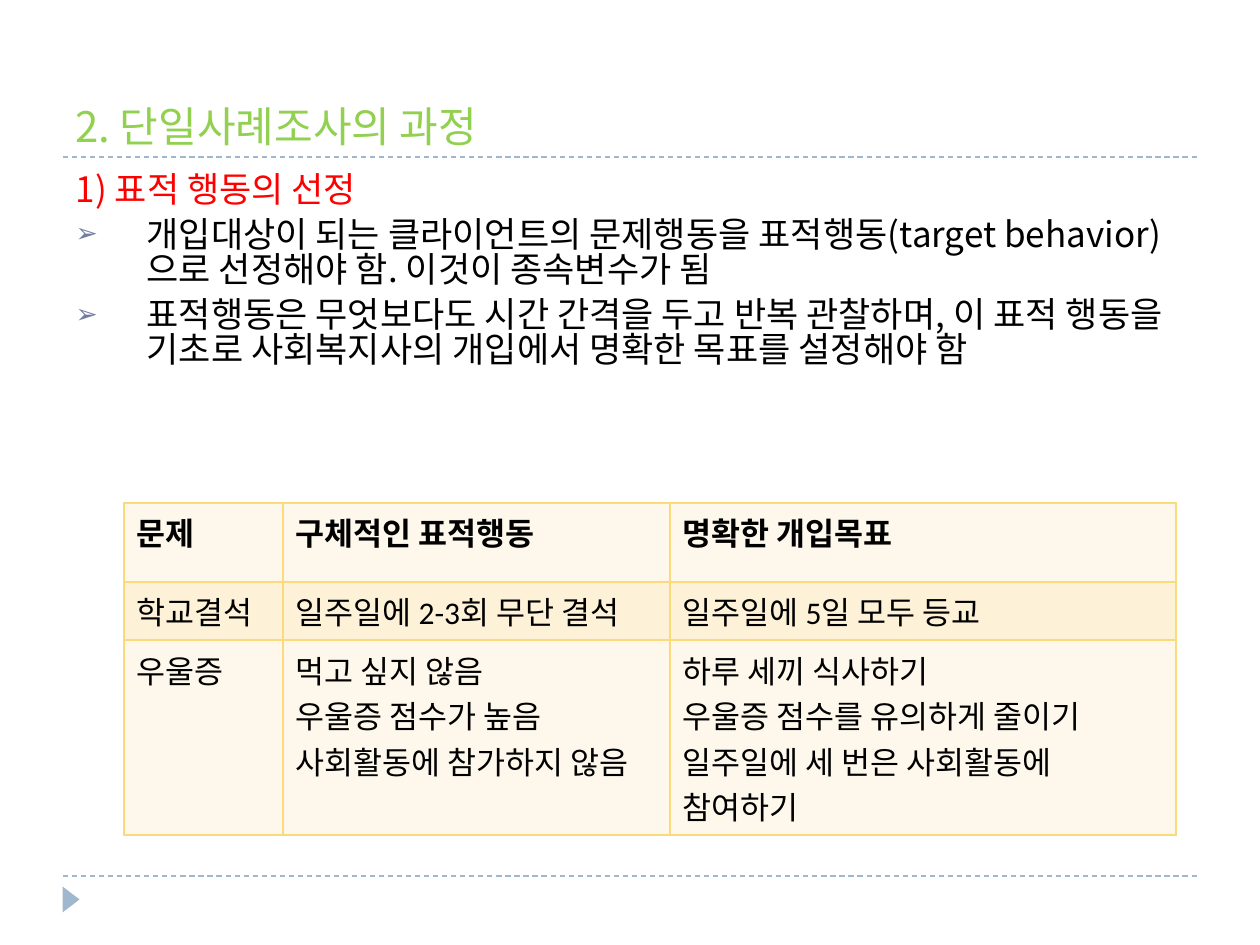
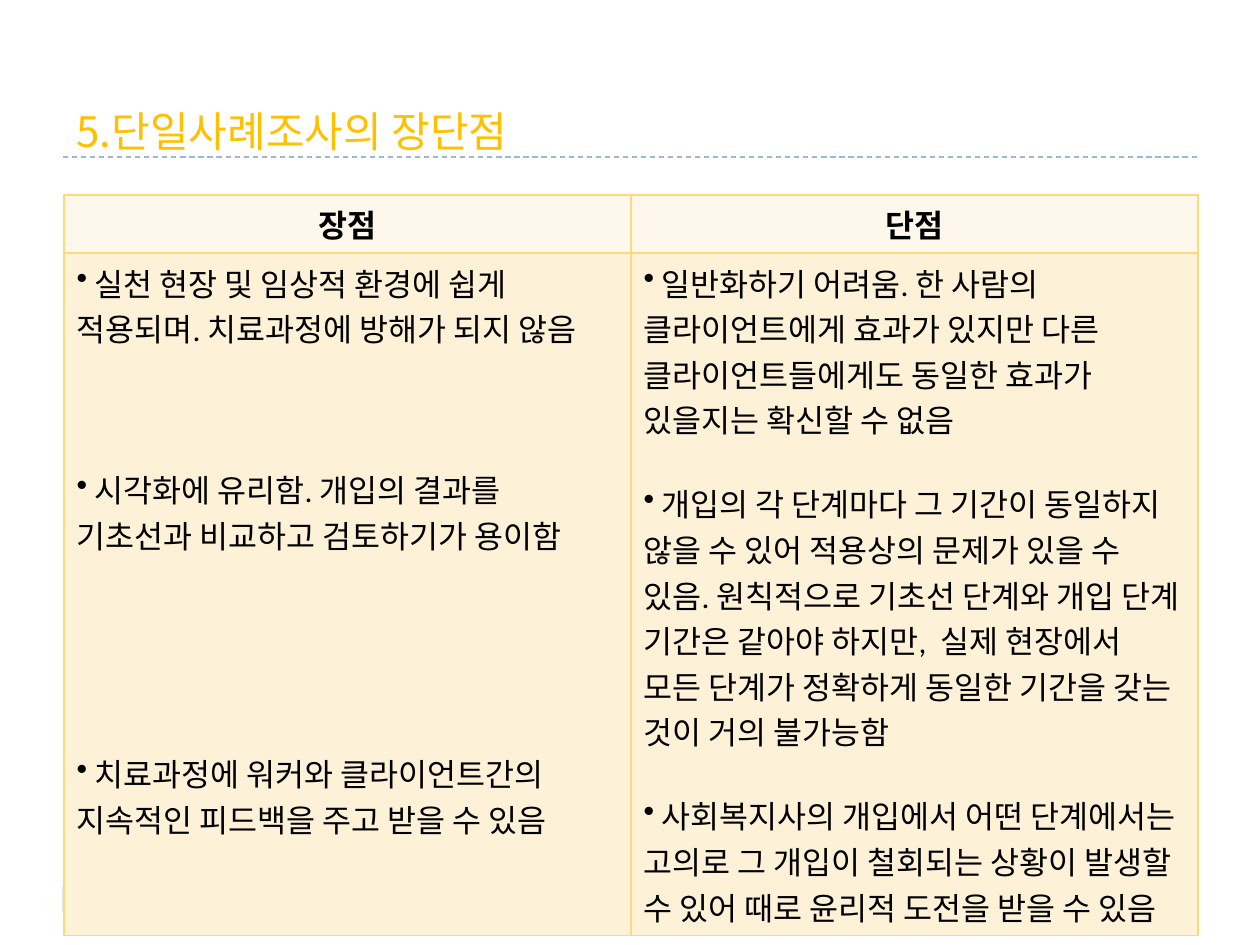
from lxml import etree
from pptx import Presentation
from pptx import util as u
from pptx.dml.color import RGBColor
from pptx.enum import dml, shapes, text
from pptx.oxml.ns import qn

PX = u.Inches(1) / 126
TITLE_ONLY, TITLE_AND_BODY = 5, 1
KOREAN, LATIN = "Noto Sans CJK KR", "Calibri"
ACCENT, BORDER, BULLET = "9FB8CD", "FADA7A", "727CA3"
BLACK, RED, GREEN, AMBER = "000000", "FF0000", "92D050", "FFC000"
ROW_FILLS = ["FEF8EC", "FDF1D7"]


def px(length):
    return u.Emu(round(length * PX))


def color(hex_string):
    return RGBColor.from_string(hex_string)


def add_child(parent, tag, **attributes):
    return etree.SubElement(parent, qn(tag), attributes)


def write(para, words, size=18, ink=BLACK, font=LATIN, bold=False, align="LEFT",
          gap=0, spacing=None, indent=0, bullet=None, bullet_ink=None, bullet_size=None):
    """Fill a paragraph; gap is the space before it in points."""
    para.alignment = getattr(text.PP_ALIGN, align)
    para.space_before = u.Pt(gap)
    if spacing:
        para.line_spacing = spacing
    props = para._p.get_or_add_pPr()
    props.set("marL", str(px(indent)))
    props.set("indent", str(-px(indent)))
    if bullet_ink:
        add_child(add_child(props, "a:buClr"), "a:srgbClr", val=bullet_ink)
    if bullet_size:
        add_child(props, "a:buSzPct", val=str(bullet_size * 1000))
    if bullet:
        add_child(props, "a:buChar", char=bullet)
    else:
        add_child(props, "a:buNone")
    span = para.add_run()
    span.text = words
    span.font.size = u.Pt(size)
    span.font.bold = bold
    span.font.name = font
    span.font.color.rgb = color(ink)
    add_child(span._r.get_or_add_rPr(), "a:ea", typeface=KOREAN)


def write_all(frame, items):
    """Write (words, format) pairs as the paragraphs of a text frame."""
    for index, (words, style) in enumerate(items):
        para = frame.add_paragraph() if index else frame.paragraphs[0]
        write(para, words, **style)


def point(words, gap=0):
    return " " + words, dict(bullet="•", gap=gap)


def lines(*texts, **style):
    return [(words, style) for words in texts]


class Page:
    def __init__(self, deck, layout):
        self.slide = deck.slides.add_slide(deck.slide_layouts[layout])
        for y in (157, 876):
            self.rule(63, 1197, y)
        self.marker(58, 891, 26, 17)

    def rule(self, left, right, y):
        line = self.slide.shapes.add_connector(
            shapes.MSO_CONNECTOR.STRAIGHT, px(left), px(y), px(right), px(y))
        line.line.color.rgb = color(ACCENT)
        line.line.width = u.Pt(0.75)
        line.line.dash_style = dml.MSO_LINE.DASH
        add_child(line._element.spPr, "a:effectLst")

    def marker(self, *place):
        triangle = self.slide.shapes.add_shape(
            shapes.MSO_SHAPE.ISOSCELES_TRIANGLE, *map(px, place))
        triangle.rotation = 90
        triangle.shadow.inherit = False
        triangle.fill.solid()
        triangle.fill.fore_color.rgb = color(ACCENT)
        triangle.line.fill.background()

    def place(self, box, left, top, width, height, anchor):
        box.left, box.top, box.width, box.height = map(px, (left, top, width, height))
        box.text_frame.vertical_anchor = anchor
        box.text_frame.auto_size = text.MSO_AUTO_SIZE.NONE

    def title(self, words, ink, left, top):
        box = self.slide.shapes.title
        self.place(box, left, top, 1134, 136, text.MSO_ANCHOR.BOTTOM)
        write(box.text_frame.paragraphs[0], words, size=24, ink=ink, font=KOREAN)

    def body(self, heading, points):
        box = self.slide.placeholders[1]
        self.place(box, 63, 168, 1134, 680, text.MSO_ANCHOR.TOP)
        shared = dict(size=20, font=KOREAN, gap=6, spacing=0.83, indent=71)
        arrow = dict(shared, bullet="➢", bullet_ink=BULLET, bullet_size=76)
        write_all(box.text_frame, lines(heading, ink=RED, **shared) + lines(*points, **arrow))

    def table(self, left, top, widths, heights, rows):
        table = self.slide.shapes.add_table(
            len(rows), len(widths), px(left), px(top), px(sum(widths)), px(sum(heights))).table
        for column, width in zip(table.columns, widths):
            column.width = px(width)
        for index, (row, height) in enumerate(zip(rows, heights)):
            table.rows[index].height = px(height)
            for cell, items in zip(table.rows[index].cells, row):
                self.cell(cell, items, ROW_FILLS[index % 2])

    def cell(self, cell, items, fill):
        props = cell._tc.get_or_add_tcPr()
        for side in ("a:lnL", "a:lnR", "a:lnT", "a:lnB"):
            edge = add_child(props, side, w=str(u.Pt(1)))
            add_child(add_child(edge, "a:solidFill"), "a:srgbClr", val=BORDER)
        cell.fill.solid()
        cell.fill.fore_color.rgb = color(fill)
        write_all(cell.text_frame, items)


def process_slide(deck):
    page = Page(deck, TITLE_AND_BODY)
    page.title("2. 단일사례조사의 과정", GREEN, 63, 21)
    page.body("1) 표적 행동의 선정", [
        "개입대상이 되는 클라이언트의 문제행동을 표적행동(target behavior)으로 "
        "선정해야 함. 이것이 종속변수가 됨",
        "표적행동은 무엇보다도 시간 간격을 두고 반복 관찰하며, 이 표적 행동을 기초로 "
        "사회복지사의 개입에서 명확한 목표를 설정해야 함",
    ])
    header = [lines(words, bold=True) for words in ("문제", "구체적인 표적행동", "명확한 개입목표")]
    page.table(124, 503, [159, 387, 506], [79, 58, 195], [
        header,
        [lines("학교결석"), lines("일주일에 2-3회 무단 결석"), lines("일주일에 5일 모두 등교")],
        [lines("우울증"),
         lines("먹고 싶지 않음", "우울증 점수가 높음", "사회활동에 참가하지 않음"),
         lines("하루 세끼 식사하기", "우울증 점수를 유의하게 줄이기",
               "일주일에 세 번은 사회활동에 참여하기")],
    ])


def pros_and_cons_slide(deck):
    page = Page(deck, TITLE_ONLY)
    page.title("5.단일사례조사의 장단점", AMBER, 64, 26)
    header = [lines(words, bold=True, align="CENTER") for words in ("장점", "단점")]
    pros = [
        point("실천 현장 및 임상적 환경에 쉽게 적용되며. 치료과정에 방해가 되지 않음"),
        point("시각화에 유리함. 개입의 결과를 기초선과 비교하고 검토하기가 용이함", gap=66),
        point("치료과정에 워커와 클라이언트간의 지속적인 피드백을 주고 받을 수 있음", gap=110),
    ]
    cons = [
        point("일반화하기 어려움. 한 사람의 클라이언트에게 효과가 있지만 다른 "
              "클라이언트들에게도 동일한 효과가 있을지는 확신할 수 없음"),
        point("개입의 각 단계마다 그 기간이 동일하지 않을 수 있어 적용상의 문제가 있을 수 있음. "
              "원칙적으로 기초선 단계와 개입 단계 기간은 같아야 하지만,  실제 현장에서 모든 단계가 "
              "정확하게 동일한 기간을 갖는 것이 거의 불가능함", gap=22),
        point("사회복지사의 개입에서 어떤 단계에서는 고의로 그 개입이 철회되는 상황이 "
              "발생할 수 있어 때로 윤리적 도전을 받을 수 있음", gap=22),
    ]
    page.table(64, 195, [567, 567], [58, 682], [header, [pros, cons]])


def main():
    deck = Presentation()
    deck.slide_width, deck.slide_height = px(1260), px(945)
    process_slide(deck)
    pros_and_cons_slide(deck)
    deck.save("out.pptx")


if __name__ == "__main__":
    main()
